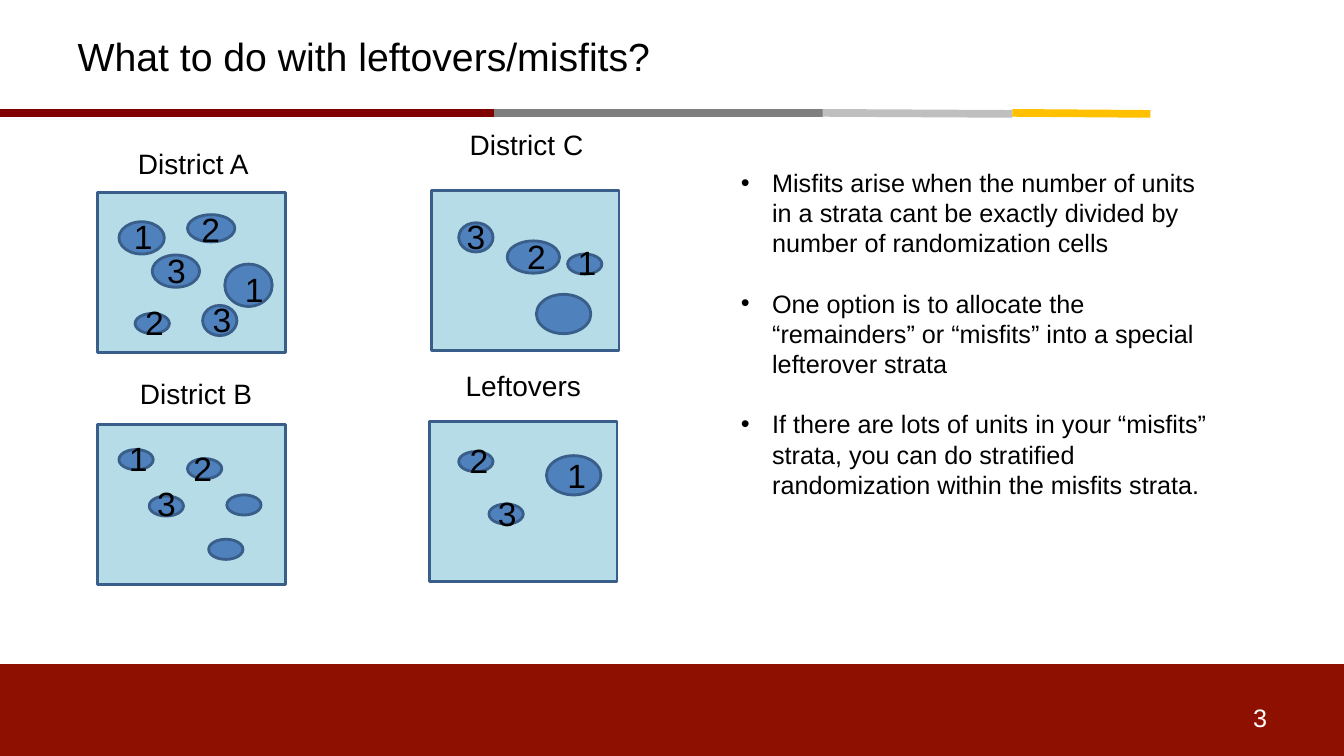
from dataclasses import dataclass

from lxml import etree
from pptx import Presentation
from pptx.dml.color import RGBColor
from pptx.enum import shapes, text
from pptx.oxml import ns
from pptx.util import Inches, Pt


@dataclass(frozen=True)
class Theme:
    font: str = "Arial"
    ink: str = "000000"
    white: str = "FFFFFF"
    footer: str = "8E1000"
    stratum: str = "B6DDE7"
    unit: str = "4F81BD"
    outline: str = "395E89"
    title_size: int = 28
    number_size: int = 24
    label_size: int = 20
    body_size: int = 18
    outline_width: float = 2
    rule_width: float = 5.5


THEME = Theme()
SMALL = (0.34, 0.2)
LARGE = (0.54, 0.39)
STRATUM_SIZE = (1.86, 1.59)

# Each stratum: name, corner, label offset, units.
# Each unit: oval offset, oval size, cell number, number offset.
STRATA = [
    ("District A", (0.97, 1.91), (0.3, -0.51), [
        ((0.21, 0.29), (0.45, 0.32), "1", (0.26, 0.18)),
        ((0.89, 0.22), (0.47, 0.27), "2", (0.93, 0.11)),
        ((0.54, 0.62), (0.47, 0.32), "3", (0.59, 0.52)),
        ((1.26, 0.71), (0.47, 0.42), "1", (1.36, 0.71)),
        ((0.37, 1.2), SMALL, "2", (0.37, 1.04)),
        ((1.04, 1.12), (0.34, 0.3), "3", (1.04, 1.01)),
    ]),
    ("District B", (0.97, 4.21), (0.32, -0.52), [
        ((0.21, 0.25), SMALL, "1", (0.21, 0.09)),
        ((0.89, 0.34), SMALL, "2", (0.85, 0.18)),
        ((0.51, 0.71), SMALL, "3", (0.49, 0.53)),
        ((1.28, 0.7), SMALL, None, None),
        ((1.1, 1.14), SMALL, None, None),
    ]),
    ("District C", (4.28, 1.89), (0.28, -0.67), [
        ((0.27, 0.32), (0.34, 0.29), "3", (0.25, 0.2)),
        ((0.75, 0.5), (0.52, 0.32), "2", (0.85, 0.4)),
        ((1.35, 0.63), SMALL, "1", (1.35, 0.46)),
        ((1.04, 1.03), LARGE, None, None),
    ]),
    ("Leftovers", (4.26, 4.18), (0.26, -0.57), [
        ((1.16, 0.34), LARGE, "1", (1.27, 0.28)),
        ((0.29, 0.3), SMALL, "2", (0.3, 0.14)),
        ((0.59, 0.82), SMALL, "3", (0.58, 0.66)),
    ]),
]

ADVICE = [
    "Misfits arise when the number of units in a strata cant be exactly divided "
    "by number of randomization cells",
    "One option is to allocate the “remainders” or “misfits” into a special "
    "lefterover strata",
    "If there are lots of units in your “misfits” strata, you can do stratified "
    "randomization within the misfits strata.",
]

RULE_ENDS = [0, 4.9, 8.16, 10.04, 11.41]
RULE_COLOURS = ["800000", "7F7F7F", "BFBFBF", "FFC000"]


def rgb(colour):
    return RGBColor.from_string(colour)


def inches(*lengths):
    return [Inches(length) for length in lengths]


def write(paragraph, words, size, colour=THEME.ink, bullet=False, before=0):
    if bullet:
        properties = paragraph._p.get_or_add_pPr()
        properties.set("marL", str(Inches(0.31)))
        properties.set("indent", str(Inches(-0.31)))
        etree.SubElement(properties, ns.qn("a:buFont")).set("typeface", THEME.font)
        etree.SubElement(properties, ns.qn("a:buChar")).set("char", "•")
    paragraph.text = words
    paragraph.alignment = text.PP_ALIGN.LEFT
    paragraph.space_before = Pt(before)
    font = paragraph.font
    font.name, font.size = THEME.font, Pt(size)
    font.color.rgb = rgb(colour)


def add_text_frame(slide, box):
    frame = slide.shapes.add_textbox(*inches(*box)).text_frame
    frame.word_wrap = True
    return frame


def add_filled(slide, kind, box, fill, outline=None):
    shape = slide.shapes.add_shape(kind, *inches(*box))
    shape.shadow.inherit = False
    shape.fill.solid()
    shape.fill.fore_color.rgb = rgb(fill)
    if outline:
        shape.line.color.rgb = rgb(outline)
        shape.line.width = Pt(THEME.outline_width)
    else:
        shape.line.fill.background()


def add_title(slide, box, words):
    title = slide.shapes.title
    title.left, title.top, title.width, title.height = inches(*box)
    title.text_frame.vertical_anchor = text.MSO_ANCHOR.MIDDLE
    write(title.text_frame.paragraphs[0], words, THEME.title_size)


def add_rule(slide, top):
    """Draw the four-coloured rule; its last two parts slope down a little."""
    for index, colour in enumerate(RULE_COLOURS):
        end_y = top + 0.01 * (index >= 2)
        ends = inches(RULE_ENDS[index], top, RULE_ENDS[index + 1], end_y)
        part = slide.shapes.add_connector(shapes.MSO_CONNECTOR.STRAIGHT, *ends)
        part.line.color.rgb = rgb(colour)
        part.line.width = Pt(THEME.rule_width)
        etree.SubElement(part._element.spPr, ns.qn("a:effectLst"))


def add_footer(slide, box, page):
    left, top, width, _ = box
    add_filled(slide, shapes.MSO_SHAPE.RECTANGLE, box, THEME.footer)
    frame = add_text_frame(slide, (left + width - 1.02, top + 0.33, 0.64, 0.4))
    write(frame.paragraphs[0], page, THEME.body_size, THEME.white)


def add_stratum(slide, box, name, label_offset, units):
    left, top = box[:2]

    def place(offset, size):
        return (left + offset[0], top + offset[1], *size)

    add_filled(slide, shapes.MSO_SHAPE.RECTANGLE, box, THEME.stratum, THEME.outline)
    label = add_text_frame(slide, place(label_offset, (1.57, 0.44)))
    write(label.paragraphs[0], name, THEME.label_size)
    for offset, size, cell, cell_offset in units:
        add_filled(slide, shapes.MSO_SHAPE.OVAL, place(offset, size),
                   THEME.unit, THEME.outline)
        if cell:
            number = add_text_frame(slide, place(cell_offset, (0.43, 0.5)))
            write(number.paragraphs[0], cell, THEME.number_size)


def add_advice(slide, box, points):
    frame = add_text_frame(slide, box)
    for index, point in enumerate(points):
        paragraph = frame.add_paragraph() if index else frame.paragraphs[0]
        write(paragraph, point, THEME.body_size, bullet=True,
              before=21.5 if index else 0)


def main():
    deck = Presentation()
    deck.slide_width, deck.slide_height = inches(13.33, 7.5)
    slide = deck.slides.add_slide(deck.slide_layouts.get_by_name("Title Only"))
    add_footer(slide, (0, 6.59, 13.35, 0.96), "3")
    add_rule(slide, 1.12)
    add_title(slide, (0.67, 0.04, 12, 1.03), "What to do with leftovers/misfits?")
    for name, corner, label_offset, units in STRATA:
        add_stratum(slide, (*corner, *STRATUM_SIZE), name, label_offset, units)
    add_advice(slide, (7.25, 1.61, 4.89, 3.43), ADVICE)
    deck.save("out.pptx")


if __name__ == "__main__":
    main()
